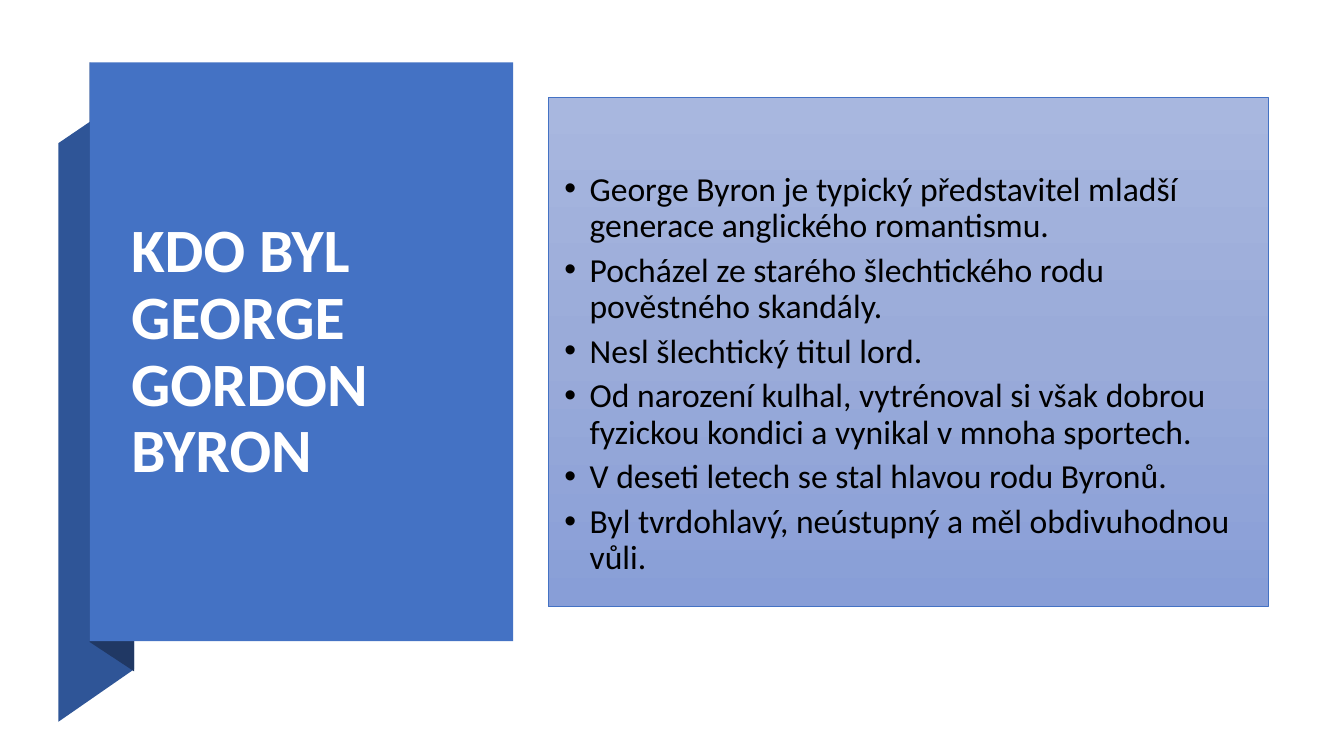
from copy import deepcopy

from lxml.etree import SubElement
from pptx import Presentation
from pptx.dml.color import RGBColor
from pptx.enum.shapes import MSO_SHAPE
from pptx.enum.text import MSO_ANCHOR, PP_ALIGN
from pptx.oxml.ns import qn
from pptx.util import Inches, Pt

BLUE = RGBColor(0x44, 0x72, 0xC4)
RIBBON_BLUE = RGBColor(0x2F, 0x55, 0x97)
FOLD_BLUE = RGBColor(0x20, 0x38, 0x64)
WHITE = RGBColor(0xFF, 0xFF, 0xFF)
BLACK = RGBColor(0x00, 0x00, 0x00)
GRADIENT = [
    (0, RGBColor(0xA8, 0xB7, 0xDF)),
    (0.5, RGBColor(0x9A, 0xAB, 0xD9)),
    (1, RGBColor(0x88, 0x9E, 0xD7)),
]
FACTS = [
    "George Byron je typický představitel mladší generace anglického romantismu.",
    "Pocházel ze starého šlechtického rodu pověstného skandály.",
    "Nesl šlechtický titul lord.",
    "Od narození kulhal, vytrénoval si však dobrou fyzickou kondici a vynikal v mnoha sportech.",
    "V deseti letech se stal hlavou rodu Byronů.",
    "Byl tvrdohlavý, neústupný a měl obdivuhodnou vůli.",
]


def format_run(run, size, color, bold=False):
    run.font.name = "Calibri"
    run.font.size = Pt(size)
    run.font.color.rgb = color
    run.font.bold = bold


prs = Presentation()
prs.slide_width, prs.slide_height = Inches(13.33), Inches(7.5)
slide = prs.slides.add_slide(prs.slide_layouts[5])
shapes = slide.shapes

# Ribbon folded behind the title panel
ribbon_parts = [
    (RIBBON_BLUE, [(0.58, 7.16), (1.33, 6.64), (1.33, 0.91), (0.58, 1.42)]),
    (FOLD_BLUE, [(0.89, 6.37), (1.33, 6.66), (1.33, 0.9), (0.89, 0.62)]),
]
for color, corners in ribbon_parts:
    points = [(Inches(x), Inches(y)) for x, y in corners]
    builder = shapes.build_freeform(*points[0])
    builder.add_line_segments(points[1:], close=True)
    ribbon = builder.convert_to_shape()
    ribbon.shadow.inherit = False
    ribbon.fill.solid()
    ribbon.fill.fore_color.rgb = color
    ribbon.line.fill.background()

panel = shapes.add_shape(
    MSO_SHAPE.RECTANGLE, Inches(0.89), Inches(0.62), Inches(4.2), Inches(5.74))
panel.shadow.inherit = False
panel.fill.solid()
panel.fill.fore_color.rgb = BLUE
panel.line.fill.background()

# Title, brought in front of its panel
title = shapes.title
panel._element.addnext(title._element)
title.left, title.top = Inches(1.2), Inches(0.97)
title.width, title.height = Inches(3.53), Inches(5.06)
title.text_frame.text = "KDO BYL \vGEORGE GORDON BYRON"
title.text_frame.word_wrap = True
title.text_frame.vertical_anchor = MSO_ANCHOR.MIDDLE
heading = title.text_frame.paragraphs[0]
heading.alignment = PP_ALIGN.LEFT
heading.line_spacing = 0.9
for run in heading.runs:
    format_run(run, 44, WHITE, bold=True)

# Facts box with a three-stop vertical gradient
facts_box = shapes.add_shape(
    MSO_SHAPE.RECTANGLE, Inches(5.44), Inches(0.97), Inches(7.14), Inches(5.05))
facts_box.shadow.inherit = False
facts_box.line.color.rgb = BLUE
facts_box.line.width = Pt(0.5)
facts_box.fill.gradient()
facts_box.fill.gradient_angle = 270
stop_list = facts_box._element.spPr.find(qn("a:gradFill")).find(qn("a:gsLst"))
stop_list.append(deepcopy(stop_list[-1]))
for stop, (position, color) in zip(facts_box.fill.gradient_stops, GRADIENT):
    stop.position = position
    stop.color.rgb = color

facts = facts_box.text_frame
facts.word_wrap = True
facts.vertical_anchor = MSO_ANCHOR.MIDDLE
facts.margin_top = Inches(0.49)
facts.text = "\n".join(FACTS)
for fact in facts.paragraphs:
    fact.alignment = PP_ALIGN.LEFT
    fact.line_spacing = 0.9
    fact.space_after = Pt(6)
    format_run(fact.runs[0], 24, BLACK)
    properties = fact._p.get_or_add_pPr()
    properties.set("marL", str(Inches(0.31)))
    properties.set("indent", str(Inches(-0.25)))
    SubElement(properties, qn("a:buFont"), typeface="Arial")
    SubElement(properties, qn("a:buChar"), char="•")

prs.save("out.pptx")
